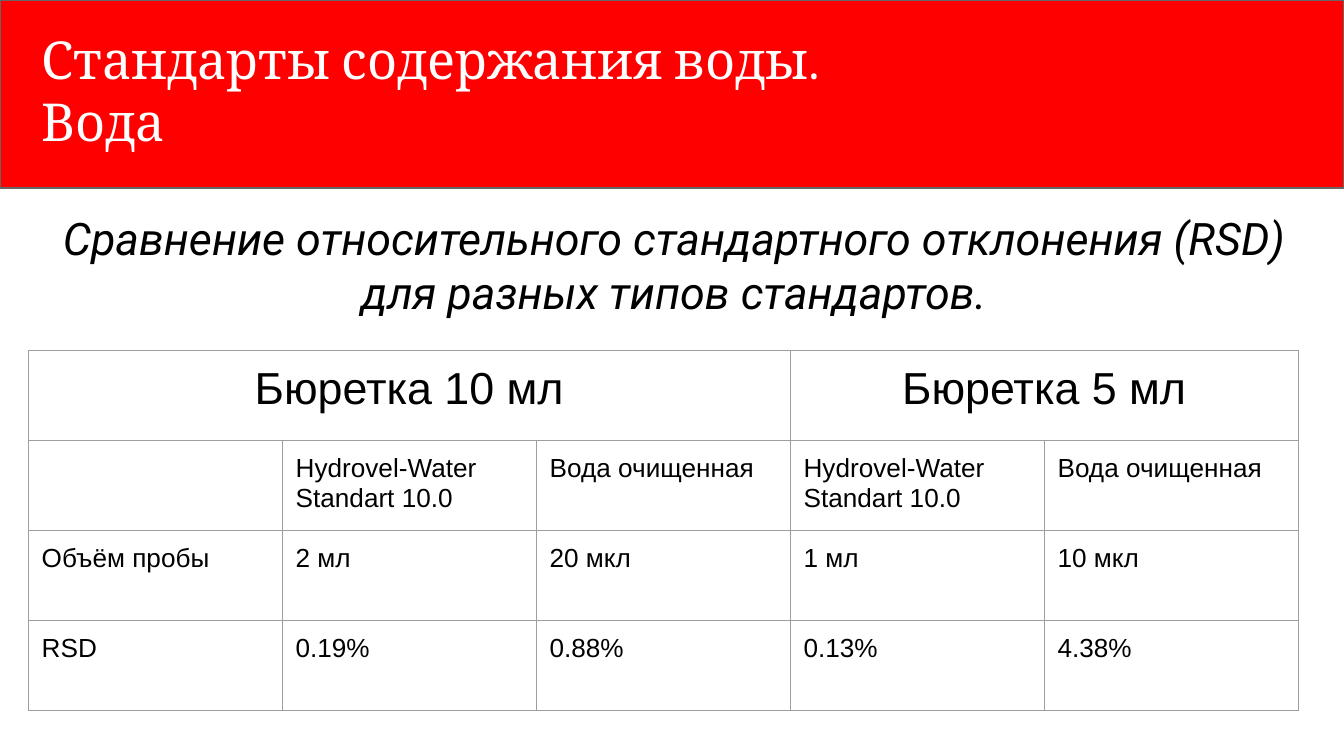
"""Build a slide comparing the RSD of water content standards."""
from lxml import etree
from pptx import Presentation
from pptx.dml.color import RGBColor
from pptx.enum.shapes import MSO_SHAPE
from pptx.enum.text import MSO_ANCHOR, MSO_AUTO_SIZE, PP_ALIGN
from pptx.oxml.ns import qn
from pptx.util import Inches, Pt

RECT = MSO_SHAPE.RECTANGLE
TOP = MSO_ANCHOR.TOP
NO_FIT = MSO_AUTO_SIZE.NONE
LEFT, CENTER = PP_ALIGN.LEFT, PP_ALIGN.CENTER

RED = RGBColor(0xFF, 0x00, 0x00)
WHITE = RGBColor(0xFF, 0xFF, 0xFF)
BLACK = RGBColor(0x00, 0x00, 0x00)
DARK_GRAY = RGBColor(0x66, 0x66, 0x66)
BORDER = "9E9E9E"

TITLE = "Стандарты содержания воды.\nВода"
SUBTITLE = "Сравнение относительного стандартного отклонения (RSD) для разных типов стандартов."
GROUPS = [("Бюретка 10 мл", 0, 2), ("Бюретка 5 мл", 3, 4)]
STANDARDS = ["Hydrovel-Water Standart 10.0", "Вода очищенная"]
ROWS = [
    [""] + STANDARDS * 2,
    ["Объём пробы", "2 мл", "20 мкл", "1 мл", "10 мкл"],
    ["RSD", "0.19%", "0.88%", "0.13%", "4.38%"],
]
SLIDE_W = Inches(10)
SLIDE_H = SLIDE_W * 9 // 16
COL_W, ROW_H = Inches(1.89), Inches(0.67)


def format_text(tf, font, size, color, align, italic=False):
    for p in tf.paragraphs:
        p.alignment = align
        p.space_before = Pt(0)
        for r in p.runs:
            r.font.name = font
            r.font.size = Pt(size)
            r.font.color.rgb = color
            r.font.italic = italic


def fill_placeholder(sp, box, text):
    sp.left, sp.top, sp.width, sp.height = map(Inches, box)
    tf = sp.text_frame
    tf.text = text
    tf.word_wrap = True
    tf.auto_size = NO_FIT
    tf.vertical_anchor = TOP
    tf.margin_left = tf.margin_right = tf.margin_top = tf.margin_bottom = Inches(0.1)
    return tf


def fill_cell(cell, text, size, align):
    cell.text = text
    cell.margin_left = cell.margin_right = Inches(0.1)
    cell.margin_top = cell.margin_bottom = Inches(0.1)
    format_text(cell.text_frame, "Arial", size, BLACK, align)


def style_cell(cell):
    tcPr = cell._tc.get_or_add_tcPr()
    for side in ("a:lnL", "a:lnR", "a:lnT", "a:lnB"):
        ln = etree.SubElement(tcPr, qn(side), w=str(Pt(0.75)))
        fill = etree.SubElement(ln, qn("a:solidFill"))
        etree.SubElement(fill, qn("a:srgbClr"), val=BORDER)
    cell.fill.background()


def add_banner(s):
    sp = s.shapes.add_shape(RECT, 0, 0, SLIDE_W, Inches(1.4))
    sp.shadow.inherit = False
    sp.fill.solid()
    sp.fill.fore_color.rgb = RED
    sp.line.color.rgb = DARK_GRAY
    sp.line.width = Pt(0.75)
    s.shapes.title.element.addprevious(sp.element)


def add_rsd_table(s):
    n_rows, n_cols = len(ROWS) + 1, len(ROWS[0])
    frame = s.shapes.add_table(n_rows, n_cols, Inches(0.21), Inches(2.61),
                               COL_W * n_cols, ROW_H * n_rows)
    table = frame.table
    table.first_row = table.horz_banding = False
    for col in table.columns:
        col.width = COL_W
    for row in table.rows:
        row.height = ROW_H
    for cell in table.iter_cells():
        style_cell(cell)
    for text, first, last in GROUPS:
        table.cell(0, first).merge(table.cell(0, last))
        fill_cell(table.cell(0, first), text, 24, CENTER)
    for i, values in enumerate(ROWS, 1):
        for j, text in enumerate(values):
            fill_cell(table.cell(i, j), text, 14, LEFT)


def main():
    prs = Presentation()
    prs.slide_width, prs.slide_height = SLIDE_W, SLIDE_H
    s = prs.slides.add_slide(prs.slide_layouts[1])
    add_banner(s)
    tf = fill_placeholder(s.shapes.title, (0.21, 0.1, 9.74, 1.24), TITLE)
    format_text(tf, "Cambria", 28, WHITE, LEFT)
    tf = fill_placeholder(s.placeholders[1], (0.07, 1.47, 9.89, 4.06), SUBTITLE)
    format_text(tf, "Roboto", 24, BLACK, CENTER, italic=True)
    pPr = tf.paragraphs[0]._p.get_or_add_pPr()
    pPr.set("marL", "0")
    pPr.set("indent", "0")
    etree.SubElement(pPr, qn("a:buNone"))
    add_rsd_table(s)
    prs.save("out.pptx")


if __name__ == "__main__":
    main()
